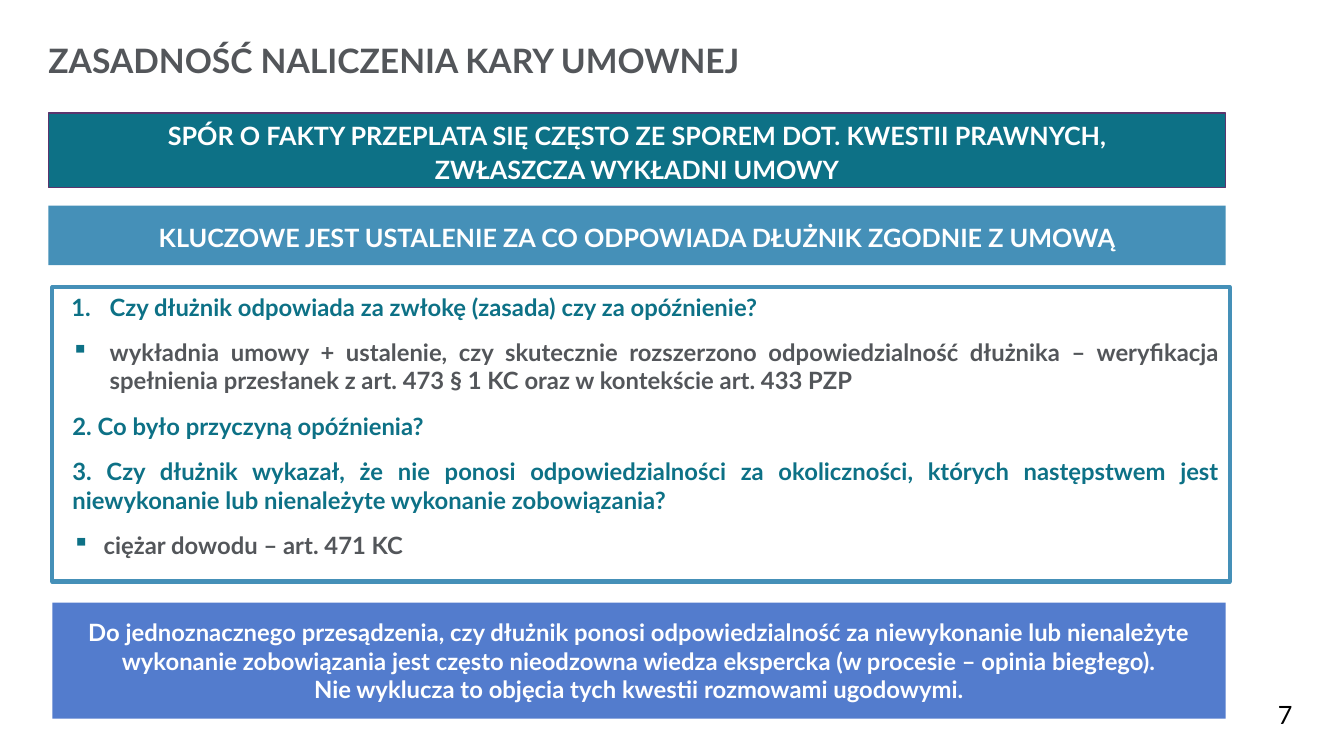
"""Build the slide on whether a contractual penalty was charged with good reason."""
import pptx
import pptx.dml.color
import pptx.enum.shapes
import pptx.enum.text
import pptx.oxml.ns
import pptx.util
from dataclasses import dataclass
from lxml import etree


@dataclass(frozen=True)
class Theme:
    font: str = "Lato"
    grey: str = "53565A"
    teal: str = "0D7186"
    blue: str = "4590B8"
    indigo: str = "537CCD"
    purple: str = "5C356D"
    white: str = "FFFFFF"
    black: str = "000000"
    title_size: int = 24
    banner_size: int = 18
    body_size: int = 17


theme = Theme()
color = pptx.dml.color.RGBColor.from_string
shapes = pptx.enum.shapes.MSO_SHAPE
align = pptx.enum.text.PP_ALIGN
anchor = pptx.enum.text.MSO_ANCHOR

presentation = pptx.Presentation()
presentation.slide_width = pptx.util.Inches(13.33)
presentation.slide_height = pptx.util.Inches(7.5)
column = presentation.slide_width / 100
row = presentation.slide_height / 100
slide = presentation.slides.add_slide(presentation.slide_layouts[5])


def place(left, top, width, height):
    """Turn percentages of the slide into a position and a size."""
    return [round(share * unit) for share, unit in
            zip((left, top, width, height), (column, row, column, row))]


def style(paragraph, size, tint, alignment, bold=True):
    """Format a paragraph and all of its runs."""
    paragraph.alignment = alignment
    for run in paragraph.runs:
        run.font.name = theme.font
        run.font.size = pptx.util.Pt(size)
        run.font.bold = bold
        run.font.color.rgb = color(tint)


title = slide.shapes.title
title.left, title.top, title.width, title.height = place(3.6, 5.33, 79.35, 5.33)
frame = title.text_frame
frame.text = "ZASADNOŚĆ NALICZENIA KARY UMOWNEJ"
frame.margin_left = frame.margin_top = frame.margin_right = frame.margin_bottom = 0
frame.vertical_anchor = anchor.TOP
frame.word_wrap = True
frame.auto_size = pptx.enum.text.MSO_AUTO_SIZE.SHAPE_TO_FIT_TEXT
style(frame.paragraphs[0], theme.title_size, theme.grey, align.LEFT)

banners = [
    ((3.6, 14.93, 87.6, 9.87), theme.teal, theme.purple, theme.banner_size, 1.14,
     "SPÓR O FAKTY PRZEPLATA SIĘ CZĘSTO ZE SPOREM DOT. KWESTII PRAWNYCH,\v"
     "ZWŁASZCZA WYKŁADNI UMOWY"),
    ((3.6, 27.2, 87.6, 7.87), theme.blue, None, theme.banner_size, 1.14,
     "KLUCZOWE JEST USTALENIE ZA CO ODPOWIADA DŁUŻNIK ZGODNIE Z UMOWĄ"),
    ((3.9, 79.73, 87.3, 15.33), theme.indigo, None, theme.body_size, 1.0,
     "Do jednoznacznego przesądzenia, czy dłużnik ponosi odpowiedzialność za niewykonanie "
     "lub nienależyte wykonanie zobowiązania jest często nieodzowna wiedza ekspercka "
     "(w procesie – opinia biegłego).\v"
     "Nie wyklucza to objęcia tych kwestii rozmowami ugodowymi."),
]
for shares, fill, outline, size, spacing, text in banners:
    banner = slide.shapes.add_shape(shapes.RECTANGLE, *place(*shares))
    banner.shadow.inherit = False
    banner.fill.solid()
    banner.fill.fore_color.rgb = color(fill)
    if outline:
        banner.line.color.rgb = color(outline)
        banner.line.width = pptx.util.Pt(1)
    else:
        banner.line.fill.background()
    frame = banner.text_frame
    frame.word_wrap = True
    frame.vertical_anchor = anchor.MIDDLE
    paragraph = frame.paragraphs[0]
    paragraph.text = text
    paragraph.line_spacing = spacing
    style(paragraph, size, theme.white, align.CENTER)

questions = slide.shapes.add_shape(shapes.FLOWCHART_PROCESS, *place(3.9, 38, 87.6, 38.93))
questions.shadow.inherit = False
questions.fill.background()
questions.line.color.rgb = color(theme.blue)
questions.line.width = pptx.util.Pt(3)
frame = questions.text_frame
frame.word_wrap = True
frame.vertical_anchor = anchor.TOP

number = ("a:buAutoNum", {"type": "arabicPeriod"})
square = ("a:buChar", {"char": "▪"})
items = [
    (number, 0.47, -0.38, theme.teal,
     "Czy dłużnik odpowiada za zwłokę (zasada) czy za opóźnienie?"),
    (square, 0.47, -0.38, theme.grey,
     "wykładnia umowy + ustalenie, czy skutecznie rozszerzono odpowiedzialność dłużnika – "
     "weryfikacja spełnienia przesłanek z art. 473 § 1 KC oraz w kontekście art. 433 PZP"),
    (None, 0.1, 0, theme.teal, "2. Co było przyczyną opóźnienia?"),
    (None, 0.1, 0, theme.teal,
     "3. Czy dłużnik wykazał, że nie ponosi odpowiedzialności za okoliczności, których "
     "następstwem jest niewykonanie lub nienależyte wykonanie zobowiązania?"),
    (square, 0.41, -0.31, theme.grey, "ciężar dowodu – art. 471 KC"),
]
qualify = pptx.oxml.ns.qn
for index, (bullet, margin, indent, tint, text) in enumerate(items):
    paragraph = frame.add_paragraph() if index else frame.paragraphs[0]
    paragraph.text = text
    properties = paragraph._p.get_or_add_pPr()
    properties.set("marL", str(pptx.util.Inches(margin)))
    properties.set("indent", str(pptx.util.Inches(indent)))
    if bullet:
        tag, attributes = bullet
        bullet_color = etree.SubElement(properties, qualify("a:buClr"))
        etree.SubElement(bullet_color, qualify("a:srgbClr"), val=theme.teal)
        etree.SubElement(properties, qualify(tag), attributes)
    paragraph.space_before = pptx.util.Pt(6 if index else 0)
    paragraph.space_after = pptx.util.Pt(6)
    style(paragraph, theme.body_size, tint, align.JUSTIFY)

page_number = slide.shapes.add_textbox(*place(94.35, 91.87, 3.3, 4.8))
page_number.text_frame.word_wrap = True
page_number.text_frame.text = "7"
style(page_number.text_frame.paragraphs[0], theme.banner_size, theme.black, align.LEFT, False)

presentation.save("out.pptx")
